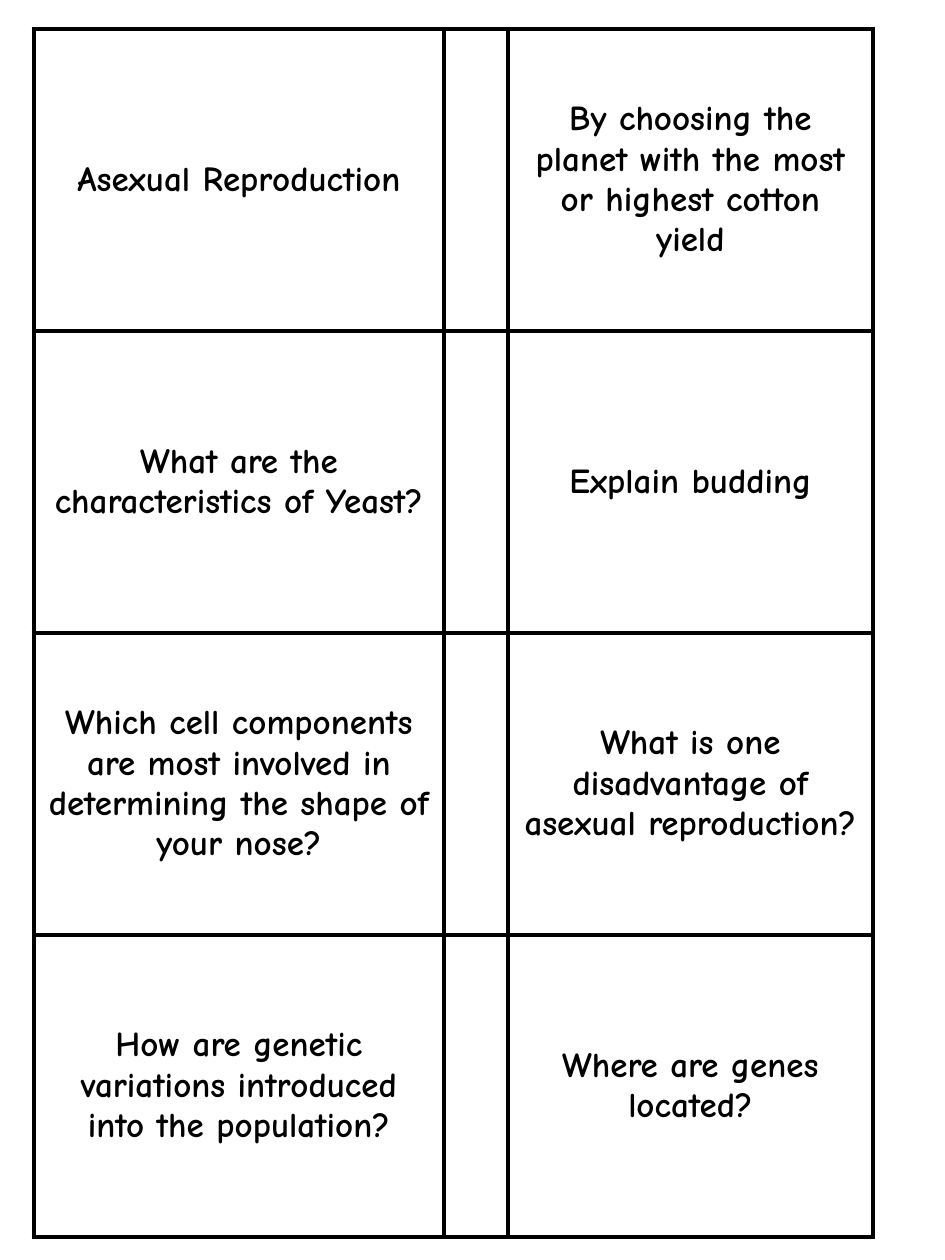
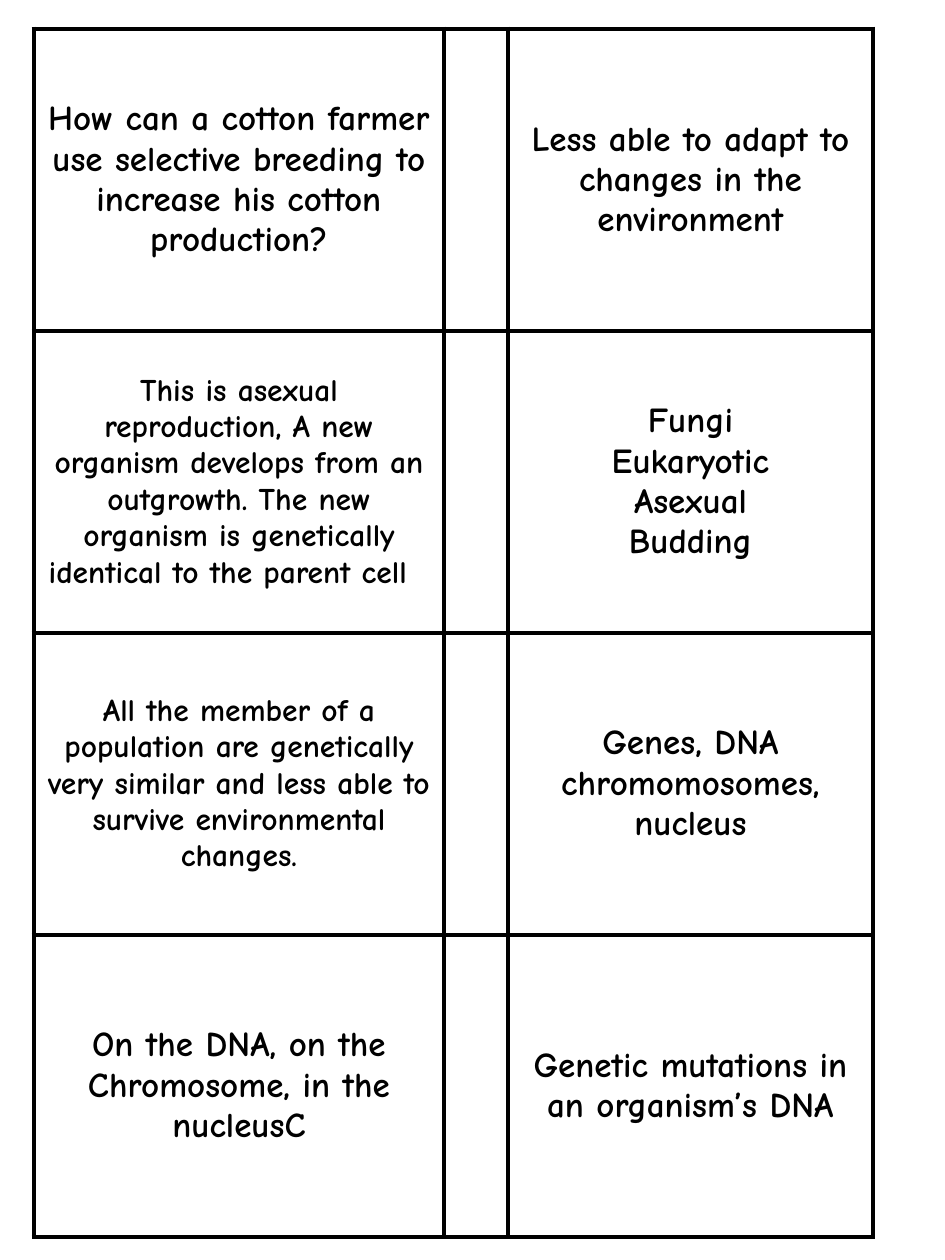
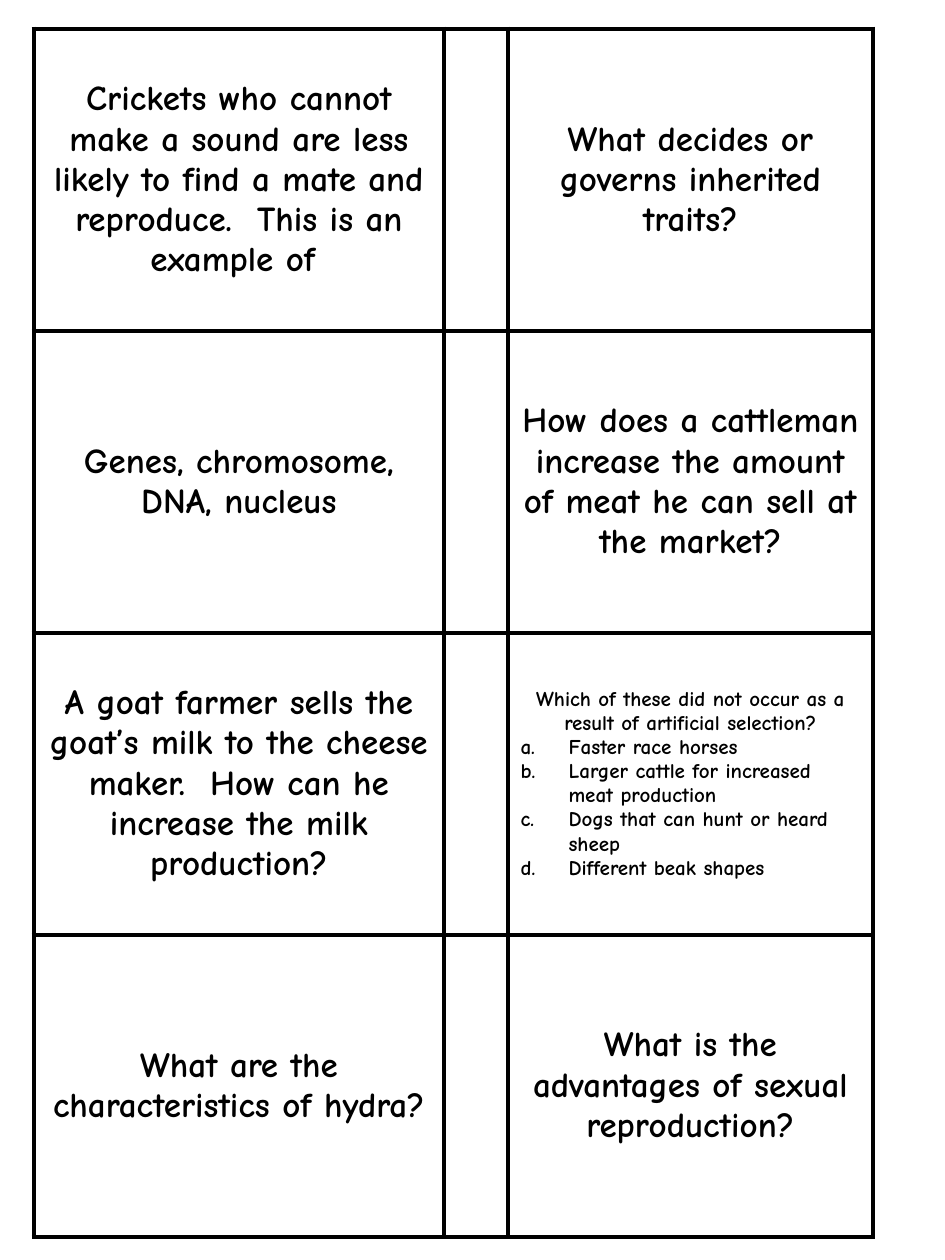
from lxml.etree import SubElement
from pptx import Presentation
from pptx.dml.color import RGBColor
from pptx.enum.text import MSO_ANCHOR as Anchor, PP_ALIGN as Align
from pptx.oxml import parse_xml
from pptx.oxml.ns import nsdecls, qn
from pptx.util import Pt

COLORS = {"ink": "000000"}
FONT = "Comic Neue"
PX = 914400 / 126
PAGE = (945, 1260)
GRID_LEFT, GRID_TOP = 34, 29
COLUMNS = (410, 64, 365)
ROW_HEIGHT = 302
INDENT = 48
BORDER = Pt(3)
SIZE = 20
SMALLER = {"This is asexual": 18, "All the member": 18, "Which of these": 12}

SELECTION_QUIZ = [
    "Which of these did not occur as a result of artificial selection?",
    ("Faster race horses", "Larger cattle for increased meat production",
     "Dogs that can hunt or heard sheep", "Different beak shapes"),
]

CARD_PAGES = [
    [
        (["Asexual Reproduction"],
         ["By choosing the planet with the most or highest cotton yield"]),
        (["What are the characteristics of Yeast?"], ["Explain budding"]),
        (["Which cell components are most involved in determining the shape of your nose?"],
         ["What is one disadvantage of asexual reproduction?"]),
        (["How are genetic variations introduced into the population?"],
         ["Where are genes located?"]),
    ],
    [
        (["How can a cotton farmer use selective breeding to increase his cotton production?"],
         ["Less able to adapt to changes in the environment"]),
        (["This is asexual reproduction, A new organism develops from an outgrowth. "
          "The new organism is genetically identical to the parent cell  "],
         ["Fungi", "Eukaryotic", "Asexual", "Budding"]),
        (["All the member of a population are genetically very similar and less able to "
          "survive environmental changes."],
         ["Genes, DNA chromomosomes, nucleus"]),
        (["On the DNA, on the Chromosome, in the nucleusC"],
         ["Genetic mutations in an organism’s DNA"]),
    ],
    [
        (["Crickets who cannot make a sound are less likely to find a mate and reproduce.  "
          "This is an example of "],
         ["What decides or governs inherited traits?"]),
        (["Genes, chromosome, DNA, nucleus"],
         ["How does a cattleman increase the amount of meat he can sell at the market?"]),
        (["A goat farmer sells the goat’s milk to the cheese maker.  "
          "How can he increase the milk production?"],
         SELECTION_QUIZ),
        (["What are the characteristics of hydra?"],
         ["What is the advantages of sexual reproduction?"]),
    ],
]


def emu(px):
    """Turn px into EMU."""
    return round(px * PX)


def outline(cell):
    """Draw all four borders of a cell and leave it unfilled."""
    cell.fill.background()
    properties = cell._tc.get_or_add_tcPr()
    for position, side in enumerate("LRTB"):
        properties.insert(position, parse_xml(
            f'<a:ln{side} {nsdecls("a")} w="{BORDER}"><a:solidFill>'
            f'<a:srgbClr val="{COLORS["ink"]}"/></a:solidFill></a:ln{side}>'))


def letter(paragraph):
    """Number a paragraph a., b., c. with a hanging indent."""
    properties = paragraph._p.get_or_add_pPr()
    properties.set("marL", str(emu(INDENT)))
    properties.set("indent", str(-emu(INDENT)))
    SubElement(properties, qn("a:buAutoNum"), type="alphaLcPeriod")


def write_card(cell, card):
    """Write a card's centred lines and lettered answers."""
    size = next((s for start, s in SMALLER.items() if card[0].startswith(start)), SIZE)
    lines = []
    for part in card:
        answers = isinstance(part, tuple)
        lines += [(text, answers) for text in (part if answers else [part])]
    frame = cell.text_frame
    for number, (text, is_answer) in enumerate(lines):
        paragraph = frame.add_paragraph() if number else frame.paragraphs[0]
        paragraph.text = text
        if is_answer:
            letter(paragraph)
        else:
            paragraph.alignment = Align.CENTER
        font = paragraph.font
        font.name, font.size, font.bold = FONT, Pt(size), True
        font.color.rgb = RGBColor.from_string(COLORS["ink"])
    cell.vertical_anchor = Anchor.MIDDLE


def add_cards(slide, rows):
    """Add the grid of cards with a gutter down the middle."""
    grid = slide.shapes.add_table(
        len(rows), len(COLUMNS), emu(GRID_LEFT), emu(GRID_TOP),
        emu(sum(COLUMNS)), emu(ROW_HEIGHT * len(rows))).table
    grid.first_row = grid.horz_banding = False
    for column, width in zip(grid.columns, COLUMNS):
        column.width = emu(width)
    for cell in grid.iter_cells():
        outline(cell)
    for row, (left_card, right_card) in enumerate(rows):
        write_card(grid.cell(row, 0), left_card)
        write_card(grid.cell(row, 2), right_card)


def main():
    """Build the card pages and save them."""
    deck = Presentation()
    deck.slide_width, deck.slide_height = map(emu, PAGE)
    for rows in CARD_PAGES:
        add_cards(deck.slides.add_slide(deck.slide_layouts[6]), rows)
    deck.save("out.pptx")


if __name__ == "__main__":
    main()
